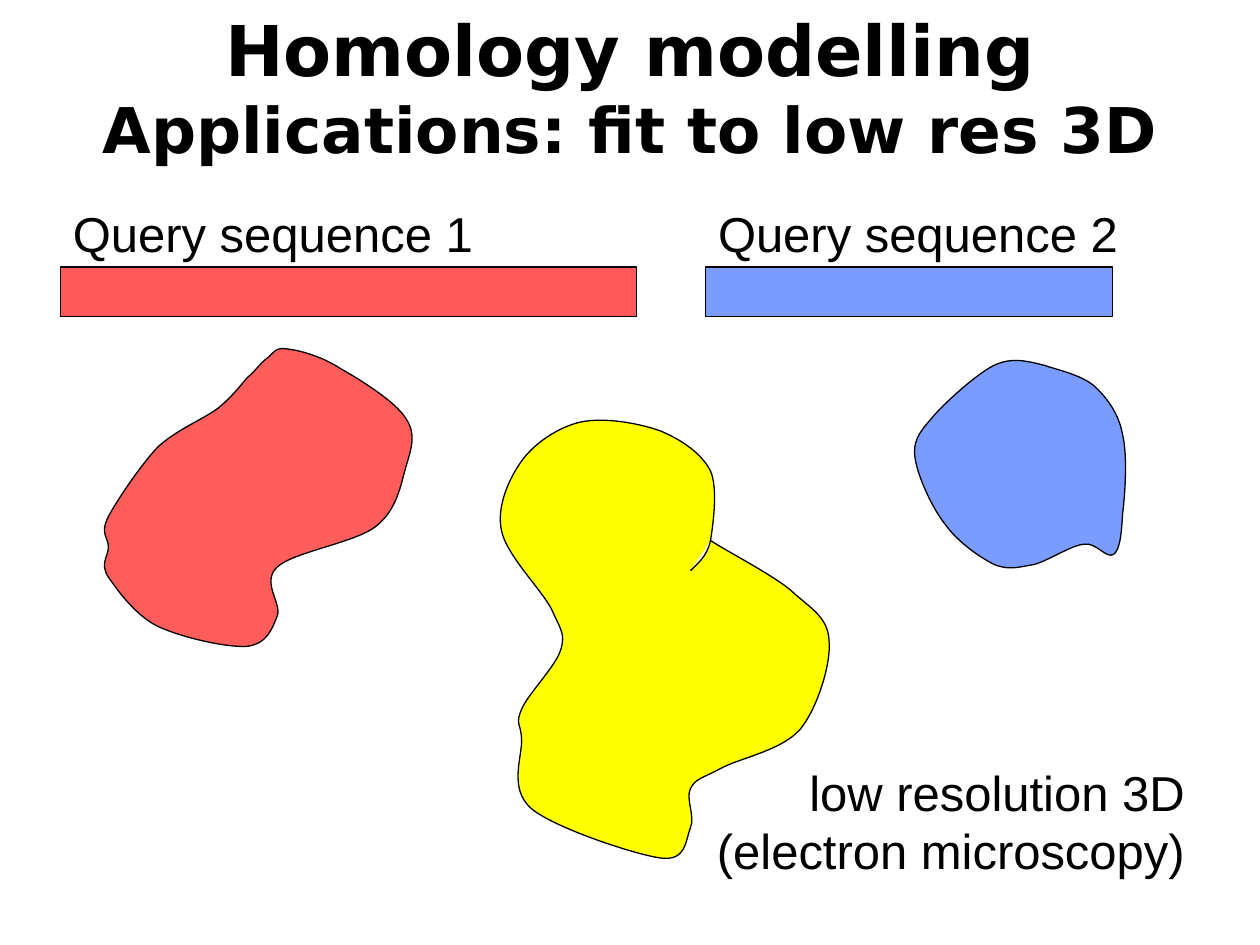
from dataclasses import dataclass

from lxml.etree import SubElement
from pptx import Presentation
from pptx.dml.color import RGBColor
from pptx.enum.shapes import MSO_SHAPE
from pptx.enum.text import MSO_AUTO_SIZE, PP_ALIGN
from pptx.oxml.ns import qn
from pptx.shapes.autoshape import Shape
from pptx.slide import Slide
from pptx.util import Inches, Pt

BLACK = RGBColor(0x00, 0x00, 0x00)
RED = RGBColor(0xFF, 0x00, 0x00)
BLUE = RGBColor(0x33, 0x66, 0xFF)
YELLOW = RGBColor(0xFF, 0xFF, 0x00)

TITLE = {"name": "DejaVu Sans", "size": Pt(40), "bold": True}
SUBTITLE = {**TITLE, "size": Pt(36)}
BODY = {"name": "Arial", "size": Pt(28), "bold": False}


@dataclass(frozen=True)
class Label:
    text: str
    left: float
    top: float
    width: float
    height: float
    font: dict
    alignment: PP_ALIGN = PP_ALIGN.LEFT
    wrap: bool = True


@dataclass(frozen=True)
class Sequence:
    name: str
    left: float
    width: float
    color: RGBColor


@dataclass(frozen=True)
class Blob:
    color: RGBColor
    opacity: int
    closed: bool
    start: tuple[float, float]
    curves: list[tuple[float, ...]]


LABELS = [
    Label("Homology modelling", 0, 0, 10, 0.77, TITLE, PP_ALIGN.CENTER),
    Label("Applications: fit to low res 3D", 0, 0.67, 10, 0.7, SUBTITLE, PP_ALIGN.CENTER),
    Label("low resolution 3D (electron microscopy)", 5.17, 6, 4.33, 1.03, BODY, PP_ALIGN.RIGHT),
]

SEQUENCES = [
    Sequence("Query sequence 1", 0.48, 4.57, RED),
    Sequence("Query sequence 2", 5.6, 3.23, BLUE),
]

ELECTRON_DENSITY = Blob(YELLOW, 100, False, (5.48, 4.53), [
    (5.54, 4.47, 5.61, 4.42, 5.64, 4.29),
    (5.66, 4.16, 5.7, 3.88, 5.64, 3.74),
    (5.57, 3.6, 5.41, 3.49, 5.24, 3.42),
    (5.07, 3.36, 4.8, 3.31, 4.61, 3.35),
    (4.43, 3.39, 4.24, 3.52, 4.14, 3.66),
    (4.04, 3.8, 3.94, 4.02, 3.98, 4.21),
    (4.02, 4.41, 4.3, 4.68, 4.38, 4.84),
    (4.45, 5, 4.49, 5.03, 4.45, 5.16),
    (4.41, 5.29, 4.19, 5.51, 4.14, 5.63),
    (4.09, 5.75, 4.13, 5.73, 4.14, 5.86),
    (4.15, 6, 4.03, 6.26, 4.22, 6.42),
    (4.4, 6.57, 5.03, 6.78, 5.24, 6.81),
    (5.45, 6.84, 5.44, 6.67, 5.48, 6.57),
    (5.52, 6.48, 5.44, 6.34, 5.48, 6.26),
    (5.52, 6.18, 5.57, 6.18, 5.72, 6.1),
    (5.86, 6.02, 6.2, 5.96, 6.35, 5.79),
    (6.49, 5.62, 6.6, 5.26, 6.58, 5.08),
    (6.57, 4.89, 6.42, 4.82, 6.27, 4.68),
    (6.11, 4.55, 5.74, 4.36, 5.64, 4.29),
])

MODEL_1 = Blob(RED, 64, True, (0.86, 4.58), [
    (0.79, 4.47, 0.86, 4.42, 0.86, 4.34),
    (0.86, 4.26, 0.79, 4.24, 0.86, 4.1),
    (0.93, 3.97, 1.11, 3.7, 1.25, 3.55),
    (1.4, 3.41, 1.61, 3.33, 1.73, 3.24),
    (1.84, 3.15, 1.9, 3.07, 1.96, 3),
    (2.03, 2.94, 2.06, 2.89, 2.11, 2.85),
    (2.17, 2.81, 2.18, 2.75, 2.28, 2.77),
    (2.38, 2.78, 2.56, 2.83, 2.71, 2.93),
    (2.87, 3.02, 3.14, 3.19, 3.22, 3.32),
    (3.31, 3.45, 3.26, 3.57, 3.22, 3.71),
    (3.18, 3.85, 3.15, 4.05, 2.98, 4.18),
    (2.81, 4.31, 2.33, 4.38, 2.2, 4.5),
    (2.07, 4.62, 2.24, 4.79, 2.2, 4.89),
    (2.16, 4.99, 2.12, 5.11, 1.96, 5.13),
    (1.8, 5.14, 1.44, 5.06, 1.25, 4.97),
    (1.07, 4.88, 0.93, 4.68, 0.86, 4.58),
])

MODEL_2 = Blob(BLUE, 65, True, (8.29, 2.9), [
    (8.16, 2.87, 8.04, 2.83, 7.89, 2.9),
    (7.75, 2.97, 7.52, 3.18, 7.42, 3.29),
    (7.32, 3.41, 7.25, 3.47, 7.26, 3.61),
    (7.27, 3.75, 7.39, 4.02, 7.5, 4.16),
    (7.6, 4.3, 7.77, 4.42, 7.89, 4.48),
    (8.01, 4.53, 8.09, 4.5, 8.21, 4.48),
    (8.32, 4.45, 8.5, 4.33, 8.6, 4.32),
    (8.7, 4.3, 8.78, 4.44, 8.84, 4.4),
    (8.89, 4.36, 8.9, 4.24, 8.91, 4.08),
    (8.93, 3.92, 8.95, 3.62, 8.91, 3.45),
    (8.88, 3.28, 8.78, 3.15, 8.68, 3.06),
    (8.57, 2.97, 8.37, 2.93, 8.29, 2.9),
])


def style_shape(shape: Shape, color: RGBColor, opacity: int) -> None:
    shape.shadow.inherit = False
    shape.fill.solid()
    shape.fill.fore_color.rgb = color
    if opacity < 100:
        color_element = next(shape._element.spPr.iter(qn("a:srgbClr")))
        SubElement(color_element, qn("a:alpha"), val=str(opacity * 1000))
    shape.line.color.rgb = BLACK
    shape.line.width = Pt(0.75)


def add_label(slide: Slide, label: Label) -> None:
    box = slide.shapes.add_textbox(
        Inches(label.left), Inches(label.top), Inches(label.width), Inches(label.height)
    )
    frame = box.text_frame
    frame.word_wrap = label.wrap
    frame.auto_size = MSO_AUTO_SIZE.SHAPE_TO_FIT_TEXT
    paragraph = frame.paragraphs[0]
    paragraph.alignment = label.alignment
    run = paragraph.add_run()
    run.text = label.text
    for attribute, value in label.font.items():
        setattr(run.font, attribute, value)
    run.font.color.rgb = BLACK


def add_sequence(slide: Slide, sequence: Sequence) -> None:
    bar = slide.shapes.add_shape(
        MSO_SHAPE.RECTANGLE,
        Inches(sequence.left), Inches(2.12), Inches(sequence.width), Inches(0.39),
    )
    style_shape(bar, sequence.color, 65)
    add_label(slide, Label(sequence.name, sequence.left, 1.57, 3.39, 0.57, BODY, wrap=False))


def curve_segments(shape: Shape) -> None:
    lines = list(shape._element.iter(qn("a:lnTo")))
    for first in range(0, len(lines) - 2, 3):
        group = lines[first:first + 3]
        outline = group[0].getparent()
        curve = SubElement(outline, qn("a:cubicBezTo"))
        outline.replace(group[0], curve)
        for line in group:
            curve.append(line[0])
        for line in group[1:]:
            outline.remove(line)


def add_blob(slide: Slide, blob: Blob) -> None:
    points = [
        (Inches(x), Inches(y))
        for curve in blob.curves
        for x, y in zip(curve[::2], curve[1::2])
    ]
    start_x, start_y = blob.start
    builder = slide.shapes.build_freeform(Inches(start_x), Inches(start_y))
    builder.add_line_segments(points, close=blob.closed)
    shape = builder.convert_to_shape()
    curve_segments(shape)
    style_shape(shape, blob.color, blob.opacity)


def main() -> None:
    presentation = Presentation()
    presentation.slide_width = Inches(10)
    presentation.slide_height = Inches(7.5)
    slide = presentation.slides.add_slide(presentation.slide_layouts[6])
    for label in LABELS:
        add_label(slide, label)
    for sequence in SEQUENCES:
        add_sequence(slide, sequence)
    for blob in (ELECTRON_DENSITY, MODEL_1, MODEL_2):
        add_blob(slide, blob)
    presentation.save("out.pptx")


if __name__ == "__main__":
    main()
